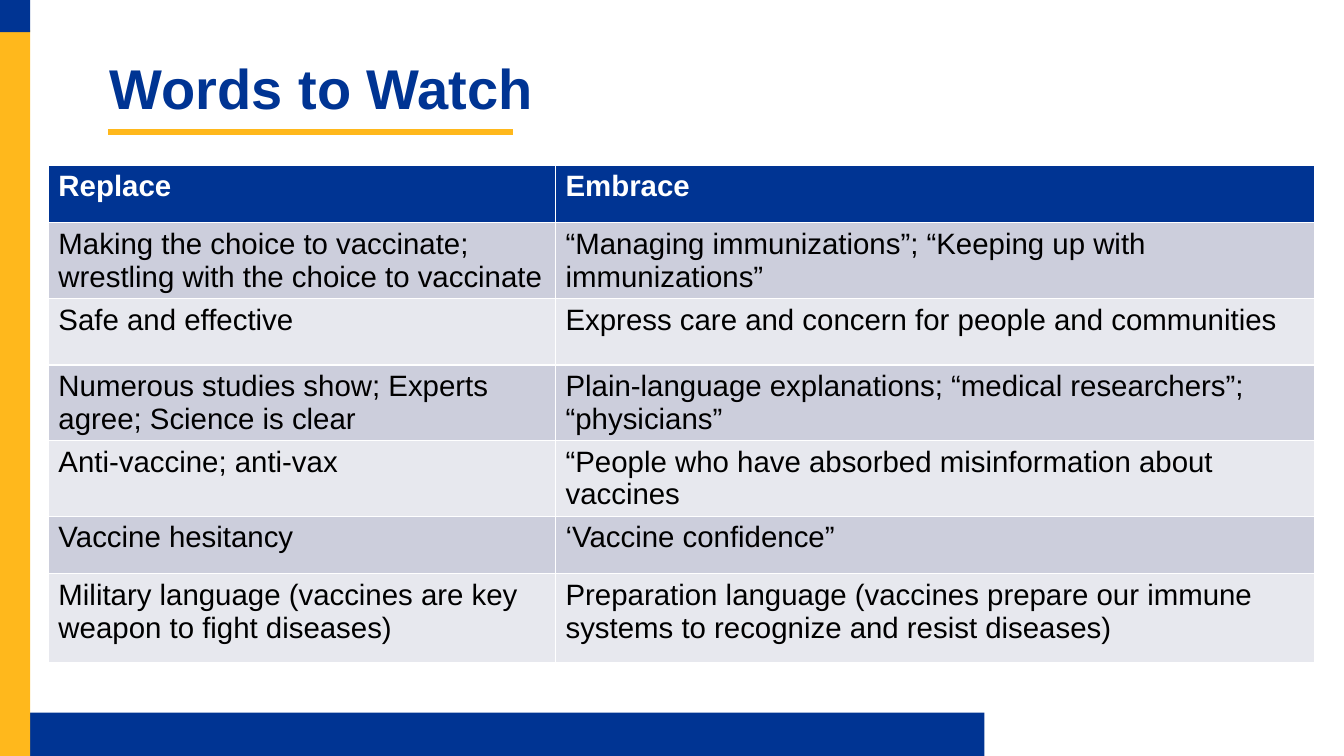
import pptx
import pptx.dml.color
import pptx.enum.shapes
import pptx.enum.text
import pptx.util
from dataclasses import dataclass
from lxml import etree

Inches = pptx.util.Inches
Pt = pptx.util.Pt
RGB = pptx.dml.color.RGBColor.from_string


@dataclass(frozen=True)
class Theme:
    """Colours, font and type sizes of the slide."""
    blue: str = "003493"
    gold: str = "FFB81C"
    white: str = "FFFFFF"
    black: str = "000000"
    bands: tuple = ("CCCEDC", "E7E8EE")
    font: str = "Arial"
    head: float = 40
    cell: float = 21


THEME = Theme()
COLS = (5.03, 7.53)
ROWS = (
    (0.57, "Replace", "Embrace"),
    (0.61, "Making the choice to vaccinate; wrestling with the choice to vaccinate",
     "“Managing immunizations”; “Keeping up with immunizations”"),
    (0.66, "Safe and effective",
     "Express care and concern for people and communities"),
    (0.61, "Numerous studies show; Experts agree; Science is clear",
     "Plain-language explanations; “medical researchers”; “physicians”"),
    (0.61, "Anti-vaccine; anti-vax",
     "“People who have absorbed misinformation about vaccines"),
    (0.57, "Vaccine hesitancy", "‘Vaccine confidence”"),
    (0.88, "Military language (vaccines are key weapon to fight diseases)",
     "Preparation language (vaccines prepare our immune systems "
     "to recognize and resist diseases)"),
)


def style(para, size, color, bold):
    """Set the font of a paragraph."""
    font = para.font
    font.name, font.size, font.bold = THEME.font, Pt(size), bold
    font.color.rgb = RGB(color)


def bar(slide, x, y, w, h, color):
    """Draw a plain filled bar."""
    kind = pptx.enum.shapes.MSO_SHAPE.RECTANGLE
    shape = slide.shapes.add_shape(kind, Inches(x), Inches(y), Inches(w), Inches(h))
    shape.shadow.inherit = False
    shape.fill.solid()
    shape.fill.fore_color.rgb = RGB(color)
    shape.line.fill.background()


def frame(slide, x, y, w, h):
    """Draw the side strip and the foot bar along the edges of the box."""
    strip, foot = 0.3, 0.43
    bar(slide, x + strip, y + h - foot, w * 0.71, foot, THEME.blue)
    bar(slide, x, y + strip, strip, h - strip, THEME.gold)
    bar(slide, x, y, strip, strip + 0.02, THEME.blue)


def title(slide, x, y, w, h):
    """Place the title in the box, with a gold rule below it."""
    rule = slide.shapes.add_connector(
        pptx.enum.shapes.MSO_CONNECTOR.STRAIGHT,
        Inches(x - 0.02), Inches(y + h + 0.01), Inches(x + 4), Inches(y + h + 0.01))
    rule.line.color.rgb = RGB(THEME.gold)
    rule.line.width = Pt(4)
    etree.SubElement(rule.element.spPr, pptx.oxml.ns.qn("a:effectLst"))

    head = slide.shapes.title
    head.left, head.top = Inches(x), Inches(y)
    head.width, head.height = Inches(w), Inches(h)
    text = head.text_frame
    text.text = "Words to Watch"
    text.margin_left = text.margin_right = 0
    text.auto_size = pptx.enum.text.MSO_AUTO_SIZE.NONE
    text.vertical_anchor = pptx.enum.text.MSO_ANCHOR.MIDDLE
    para = text.paragraphs[0]
    para.alignment = pptx.enum.text.PP_ALIGN.LEFT
    para.line_spacing = 0.9
    style(para, THEME.head, THEME.blue, True)


def grid(slide, x, y, w, h):
    """Place the table of words in the box."""
    table = slide.shapes.add_table(
        len(ROWS), len(COLS), Inches(x), Inches(y), Inches(w), Inches(h)).table
    for col, wide in zip(table.columns, COLS):
        col.width = Inches(wide)
    for i, (tall, *words) in enumerate(ROWS):
        table.rows[i].height = Inches(tall)
        top = i == 0
        for j, word in enumerate(words):
            cell = table.cell(i, j)
            cell.text = word
            cell.fill.solid()
            cell.fill.fore_color.rgb = RGB(THEME.blue if top else THEME.bands[(i - 1) % 2])
            style(cell.text_frame.paragraphs[0], THEME.cell,
                  THEME.white if top else THEME.black, top)


def main():
    """Build the slide and save it."""
    deck = pptx.Presentation()
    deck.slide_width, deck.slide_height = Inches(13.33), Inches(7.5)
    slide = deck.slides.add_slide(deck.slide_layouts.get_by_name("Title Only"))
    frame(slide, 0, 0, 13.33, 7.5)
    title(slide, 1.09, 0.52, 11.76, 0.78)
    grid(slide, 0.48, 1.64, sum(COLS), 5.08)
    deck.save("out.pptx")


if __name__ == "__main__":
    main()
